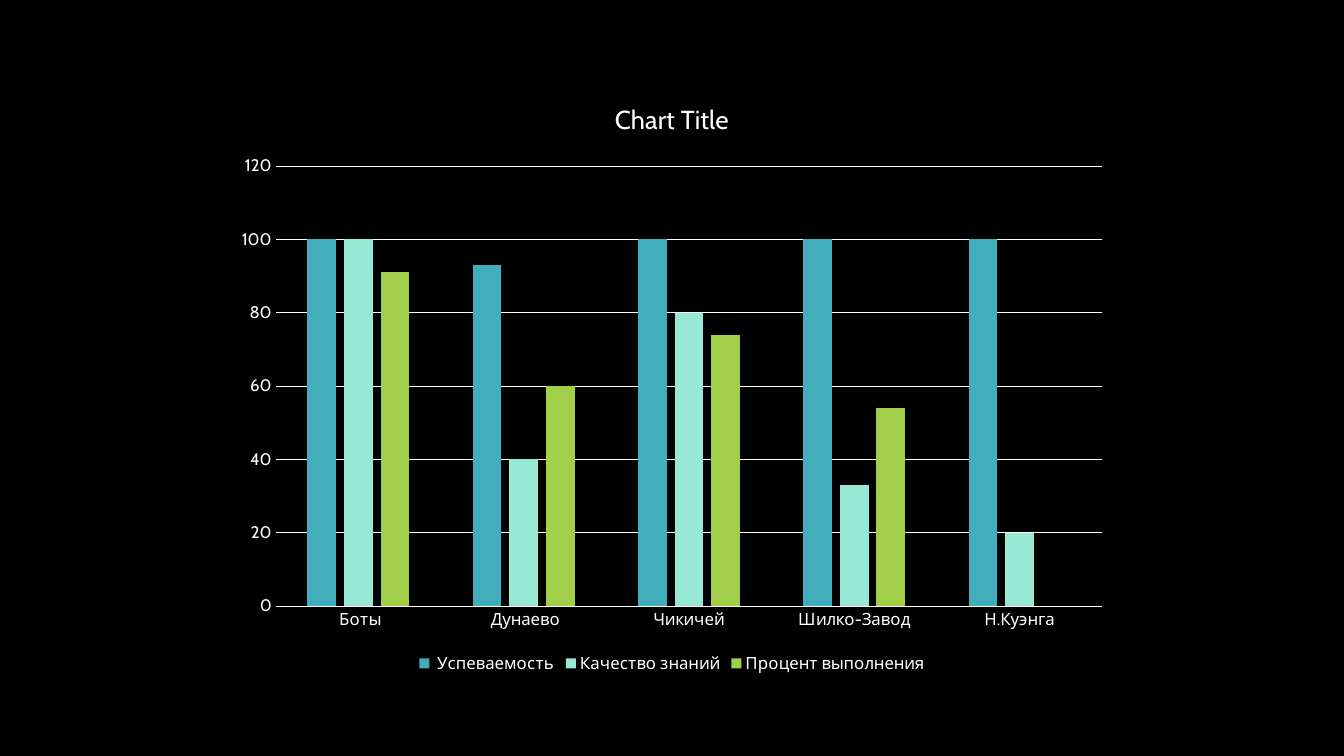
from dataclasses import dataclass

from pptx import Presentation
from pptx import util as u
from pptx.chart import data as chart_data
from pptx.dml.color import RGBColor
from pptx.enum import chart as ch


@dataclass(frozen=True)
class Theme:
    """Colours, font and type sizes of the slide."""
    background: str = "000000"
    ink: str = "FFFFFF"
    columns: tuple = ("41AEBD", "97E9D5", "A2CF49")
    font: str = "Cabin"
    base_size: float = 10
    label_size: float = 12
    title_size: float = 18.6
    line_width: float = 0.75


THEME = Theme()
SCHOOLS = [" Боты", " Дунаево", "Чикичей", "Шилко-Завод", "Н.Куэнга"]
RESULTS = {
    " Успеваемость": (100, 93, 100, 100, 100),
    "Качество знаний": (100, 40, 80, 33, 20),
    "Процент выполнения": (91, 60, 74, 54, None),
}


def style_font(font, size):
    """Apply the theme typeface and ink at the given size."""
    font.name = THEME.font
    font.size = u.Pt(size)
    font.bold = False
    font.color.rgb = RGBColor.from_string(THEME.ink)


def style_line(line):
    """Draw a thin line in the theme ink."""
    line.color.rgb = RGBColor.from_string(THEME.ink)
    line.width = u.Pt(THEME.line_width)


def paint_background(slide):
    """Fill the slide background."""
    fill = slide.background.fill
    fill.solid()
    fill.fore_color.rgb = RGBColor.from_string(THEME.background)


def add_results_chart(slide):
    """Add the clustered columns of results by school."""
    results = chart_data.CategoryChartData(number_format="General")
    results.categories = SCHOOLS
    for measure, values in RESULTS.items():
        results.add_series(measure, values)
    chart = slide.shapes.add_chart(
        ch.XL_CHART_TYPE.COLUMN_CLUSTERED, u.Inches(2.22), u.Inches(0.79),
        u.Inches(8.89), u.Inches(5.93), results).chart
    style_font(chart.font, THEME.base_size)
    return chart


def style_columns(chart):
    """Space and colour the columns."""
    plot = chart.plots[0]
    plot.gap_width, plot.overlap = 219, -27
    plot.vary_by_categories = False
    for series, color in zip(plot.series, THEME.columns):
        series.invert_if_negative = False
        series.format.fill.solid()
        series.format.fill.fore_color.rgb = RGBColor.from_string(color)


def style_axes(chart):
    """Set the scale, gridlines and axis labels."""
    schools, percent = chart.category_axis, chart.value_axis
    for axis in (schools, percent):
        axis.major_tick_mark = axis.minor_tick_mark = ch.XL_TICK_MARK.NONE
        style_font(axis.tick_labels.font, THEME.label_size)
    style_line(schools.format.line)
    percent.format.line.fill.background()
    percent.minimum_scale, percent.maximum_scale = 0, 120
    percent.major_unit = 20
    percent.has_major_gridlines = True
    style_line(percent.major_gridlines.format.line)


def add_title_and_legend(chart):
    """Add the chart title above and the legend below."""
    chart.has_title = True
    heading = chart.chart_title.text_frame
    heading.text = "Chart Title"
    style_font(heading.paragraphs[0].runs[0].font, THEME.title_size)
    chart.chart_title.include_in_layout = False
    chart.has_legend = True
    chart.legend.position = ch.XL_LEGEND_POSITION.BOTTOM
    chart.legend.include_in_layout = False
    style_font(chart.legend.font, THEME.label_size)


def main():
    """Build and save the slide."""
    deck = Presentation()
    deck.slide_width, deck.slide_height = u.Inches(13.33), u.Inches(7.5)
    slide = deck.slides.add_slide(deck.slide_layouts[6])
    paint_background(slide)
    chart = add_results_chart(slide)
    style_columns(chart)
    style_axes(chart)
    add_title_and_legend(chart)
    deck.save("out.pptx")


if __name__ == "__main__":
    main()
